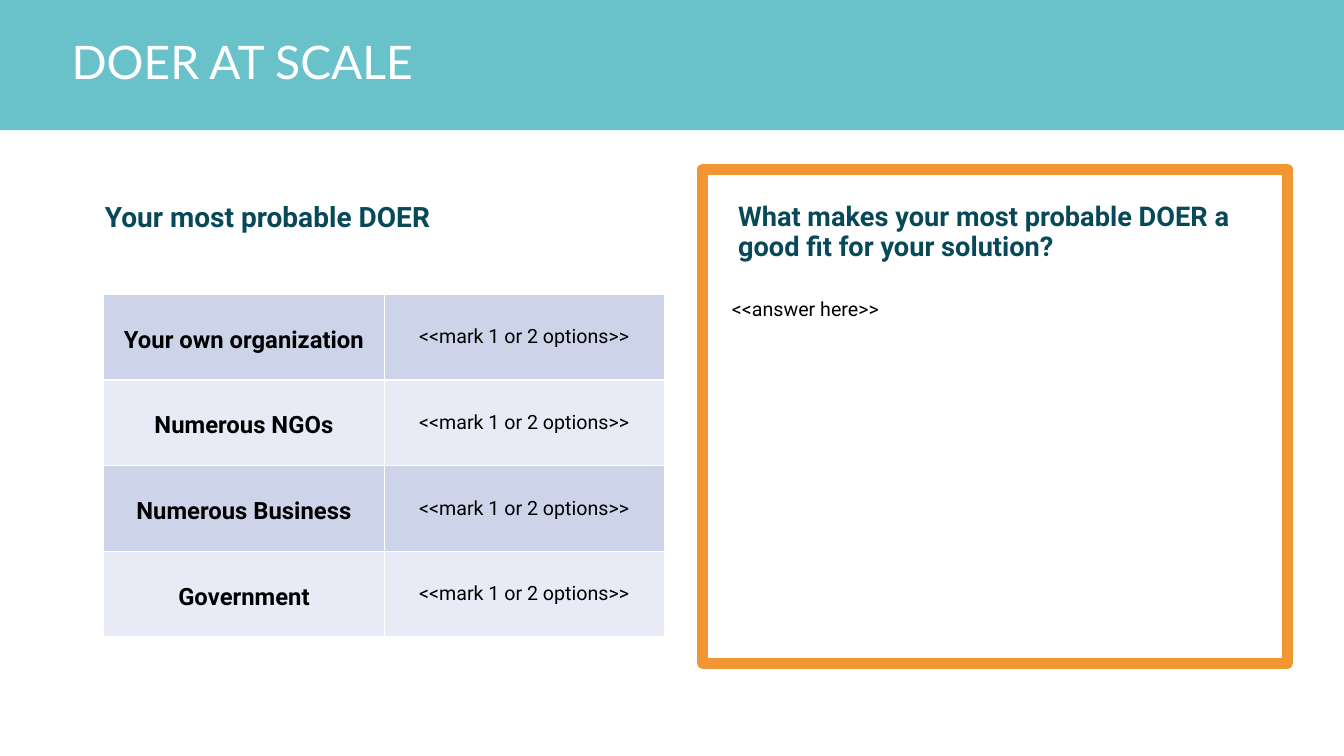
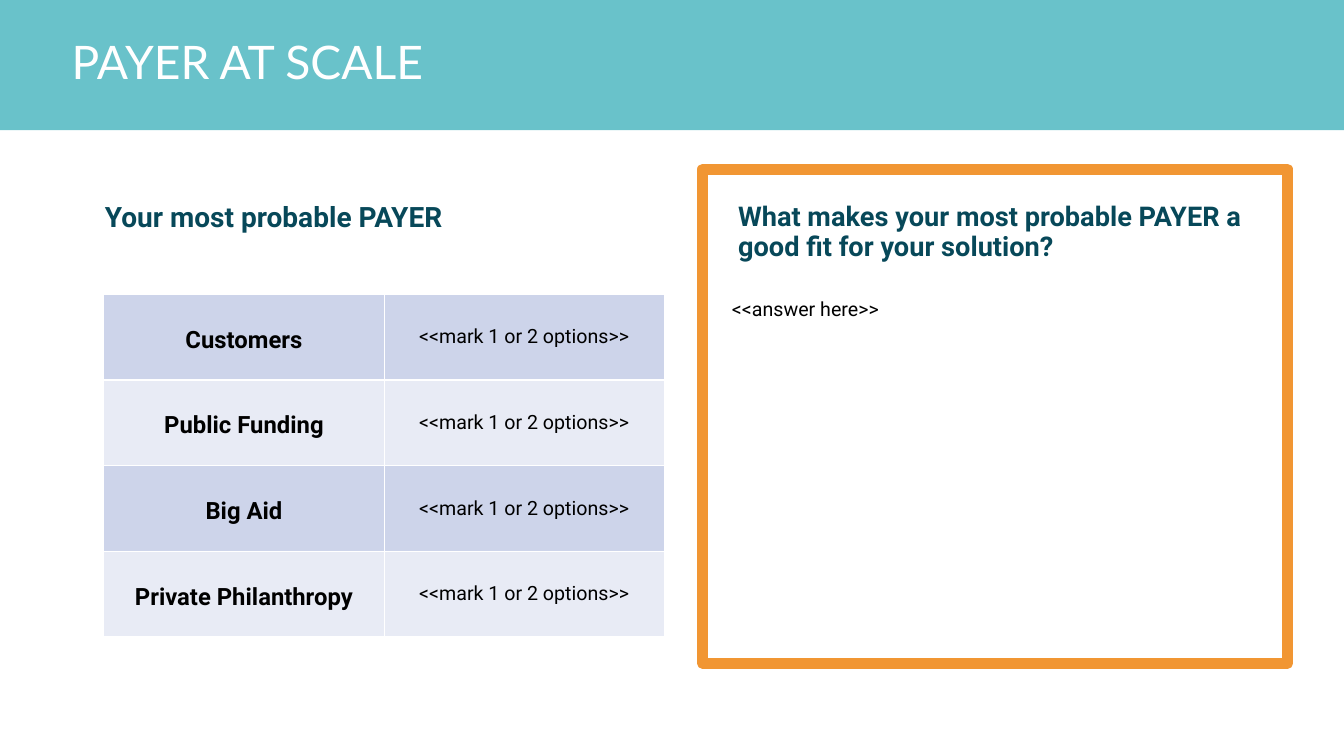
import pptx
import pptx.util
import pptx.dml.color
import pptx.enum.shapes
import pptx.enum.text
import pptx.oxml.ns
import lxml.etree

Inches, Pt = pptx.util.Inches, pptx.util.Pt
ALIGN, ANCHOR = pptx.enum.text.PP_ALIGN, pptx.enum.text.MSO_ANCHOR

# Shared look
SLIDE_W, SLIDE_H = 13.33, 7.5
TEAL, NAVY, ORANGE = "69C2CA", "074859", "F19633"
WHITE, BLACK = "FFFFFF", "000000"
ROW_FILLS = ("CDD4EA", "E8EBF5")
TITLE_FONT, BODY_FONT = "Lato", "Roboto"
OPTION_PROMPT, ANSWER_PROMPT = "<<mark 1 or 2 options>>", "<<answer here>>"

# Wording of each slide: role and its table rows
SLIDES = (
    ("DOER", ("Your own organization", "Numerous NGOs",
              "Numerous Business", "Government")),
    ("PAYER", ("Customers", "Public Funding",
               "Big Aid", "Private Philanthropy")),
)


def rgb(hex_code):
    return pptx.dml.color.RGBColor.from_string(hex_code)


def write(frame, text, size, color, font=BODY_FONT, bold=False,
          spacing=0.9, align=ALIGN.LEFT):
    paragraph = frame.paragraphs[0]
    paragraph.line_spacing = spacing
    paragraph.alignment = align
    run = paragraph.add_run()
    run.text = text
    run.font.name, run.font.size, run.font.bold = font, Pt(size), bold
    run.font.color.rgb = rgb(color)


def add_text(slide, box, text, size, color, anchor=ANCHOR.TOP, **style):
    frame = slide.shapes.add_textbox(*map(Inches, box)).text_frame
    frame.word_wrap = True
    frame.vertical_anchor = anchor
    frame.margin_left = frame.margin_right = Inches(0.05)
    frame.margin_top = frame.margin_bottom = Inches(0.05)
    write(frame, text, size, color, **style)


def add_rect(slide, box, fill=None, line=None, line_width=0):
    rect = slide.shapes.add_shape(
        pptx.enum.shapes.MSO_SHAPE.RECTANGLE, *map(Inches, box))
    rect.shadow.inherit = False
    for part, color in ((rect.fill, fill), (rect.line.fill, line)):
        if color:
            part.solid()
            part.fore_color.rgb = rgb(color)
        else:
            part.background()
    if line:
        rect.line.width = Pt(line_width)


def add_cell_borders(cell, color, width):
    qn = pptx.oxml.ns.qn
    properties = cell._tc.get_or_add_tcPr()
    for side in ("a:lnL", "a:lnR", "a:lnT", "a:lnB"):
        border = lxml.etree.SubElement(properties, qn(side), w=str(Pt(width)))
        fill = lxml.etree.SubElement(border, qn("a:solidFill"))
        lxml.etree.SubElement(fill, qn("a:srgbClr"), val=color)


def fill_cell(cell, fill, text, size, **style):
    add_cell_borders(cell, WHITE, 1)
    cell.fill.solid()
    cell.fill.fore_color.rgb = rgb(fill)
    cell.vertical_anchor = ANCHOR.MIDDLE
    cell.margin_left = cell.margin_right = 0
    cell.margin_top = cell.margin_bottom = 0
    write(cell.text_frame, text, size, BLACK, align=ALIGN.CENTER, **style)


# Title band across the top
def title_band(slide, box, title):
    left, top, width, height = box
    add_rect(slide, box, fill=TEAL)
    add_text(slide, (left + 0.66, top + 0.32, 8.91, height / 2), title,
             33, WHITE, ANCHOR.MIDDLE, font=TITLE_FONT)


# Left side: heading above the table of choices
def choice_table(slide, box, heading, choices):
    left, top, width, height = box
    add_text(slide, (left - 0.04, top, width, 0.72), heading,
             20, NAVY, bold=True)
    table_box = (left, top + 0.95, width, height - 0.95)
    table = slide.shapes.add_table(
        len(choices), 2, *map(Inches, table_box)).table
    table.first_row = table.horz_banding = False
    for index, choice in enumerate(choices):
        fill = ROW_FILLS[index % 2]
        fill_cell(table.cell(index, 0), fill, choice, 17,
                  bold=True, spacing=1.2)
        fill_cell(table.cell(index, 1), fill, OPTION_PROMPT, 14, spacing=1.0)


# Right side: framed question with room for the answer
def answer_panel(slide, box, question):
    left, top, width, height = box
    add_rect(slide, box, line=ORANGE, line_width=8)
    add_text(slide, (left + 0.3, top + 0.29, width - 0.6, 0.72), question,
             19.4, NAVY, bold=True)
    add_text(slide, (left + 0.24, top + 1.24, width - 0.48, height - 1.5),
             ANSWER_PROMPT, 14, BLACK)


def scale_slide(deck, role, choices):
    slide = deck.slides.add_slide(deck.slide_layouts[6])
    title_band(slide, (0, 0, SLIDE_W, 1.29), f"{role} AT SCALE")
    choice_table(slide, (1.03, 1.97, 5.56, 4.35),
                 f"Your most probable {role}", choices)
    answer_panel(slide, (6.97, 1.68, 5.8, 4.9),
                 f"What makes your most probable {role} "
                 "a good fit for your solution?")


def main():
    deck = pptx.Presentation()
    deck.slide_width, deck.slide_height = Inches(SLIDE_W), Inches(SLIDE_H)
    for role, choices in SLIDES:
        scale_slide(deck, role, choices)
    deck.save("out.pptx")


if __name__ == "__main__":
    main()
